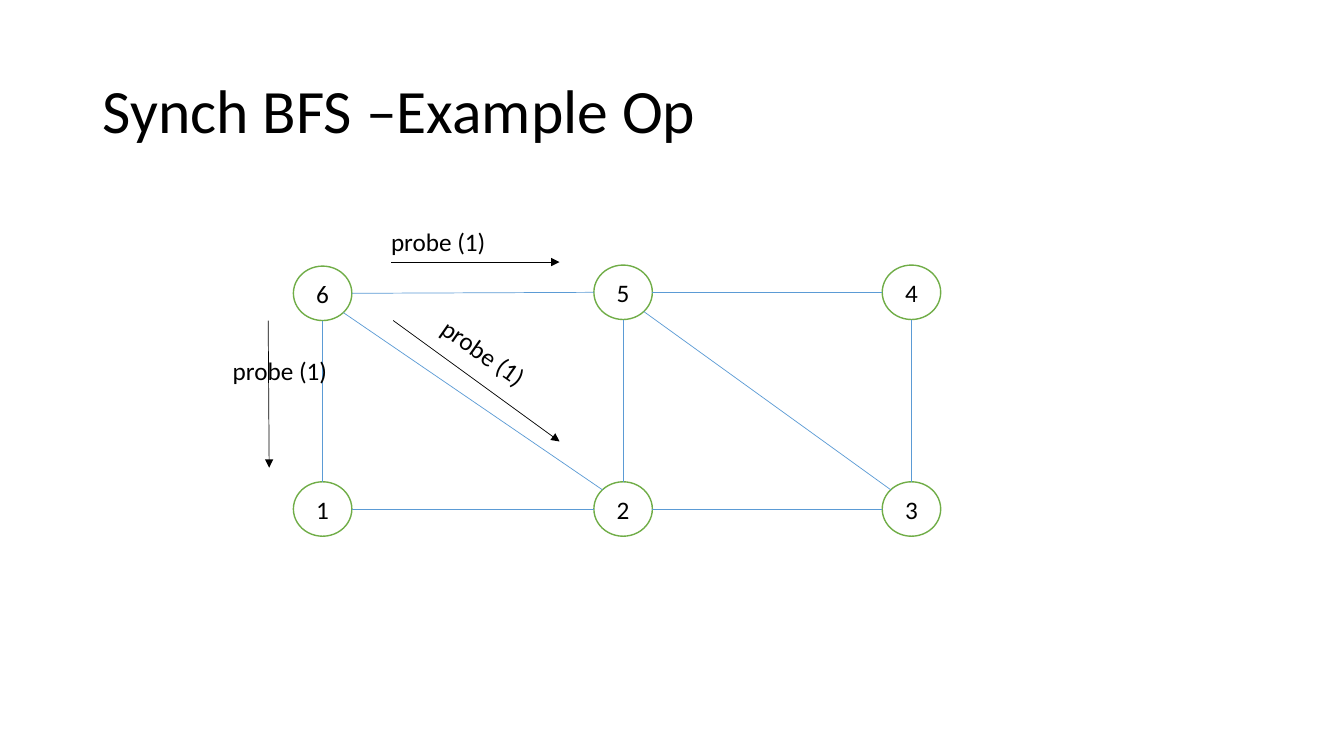
import math

import lxml.etree
import pptx
import pptx.dml.color
import pptx.enum.shapes
import pptx.enum.text
import pptx.oxml.ns
import pptx.util

PX = 9144
WIDE, HIGH = 58, 54
COLORS = {"text": "000000", "node": "FFFFFF", "ring": "70AD47", "edge": "5B9BD5"}
ALIGN = pptx.enum.text.PP_ALIGN
ANCHOR = pptx.enum.text.MSO_ANCHOR
SIZING = pptx.enum.text.MSO_AUTO_SIZE

NODES = {
    "1": (291, 478),
    "5": (589, 263),
    "2": (589, 478),
    "4": (875, 263),
    "3": (875, 478),
    "6": (291, 264),
}
EDGES = [
    ("6", "5", 1, 0),
    ("6", "1", 0, 1),
    ("1", "2", 1, 0),
    ("5", "2", 0, 1),
    ("5", "4", 1, 0),
    ("4", "3", 0, 1),
    ("2", "3", 1, 0),
    ("6", "2", 1, 1),
    ("5", "3", 1, 1),
]
PROBES = [
    ((388, 260), (555, 260), (378, 220), 0),
    ((266, 318), (267, 464), (221, 348), 0),
    ((390, 318), (555, 438), (423, 330), 35),
]


def scale(*vals):
    return [round(val * PX) for val in vals]


def color(name):
    return pptx.dml.color.RGBColor.from_string(COLORS[name])


def apply(item, vals):
    for name, val in vals.items():
        setattr(item, name, val)


def write(shape, text, size, frame, para):
    box = shape.text_frame
    box.text = text
    apply(box, frame)
    first = box.paragraphs[0]
    apply(first, para)
    font = first.runs[0].font
    apply(font, {"size": pptx.util.Pt(size), "name": "Calibri"})
    font.color.rgb = color("text")


def add_title(slide):
    title = slide.shapes.title
    left, top, width, height = scale(92, 40, 1150, 145)
    apply(title, {"left": left, "top": top, "width": width, "height": height})
    write(title, "Synch BFS –Example Op", 44,
          {"vertical_anchor": ANCHOR.MIDDLE, "auto_size": SIZING.NONE},
          {"alignment": ALIGN.LEFT, "line_spacing": 0.9})


def add_node(slide, name, place):
    kind = pptx.enum.shapes.MSO_SHAPE.OVAL
    node = slide.shapes.add_shape(kind, *scale(*place, WIDE, HIGH))
    node.shadow.inherit = False
    node.fill.solid()
    node.fill.fore_color.rgb = color("node")
    node.line.color.rgb = color("ring")
    node.line.width = pptx.util.Pt(1)
    write(node, name, 18, {"vertical_anchor": ANCHOR.MIDDLE},
          {"alignment": ALIGN.CENTER})


def add_line(slide, start, end, name):
    kind = pptx.enum.shapes.MSO_CONNECTOR.STRAIGHT
    line = slide.shapes.add_connector(kind, *scale(*start, *end))
    line.line.color.rgb = color(name)
    line.line.width = pptx.util.Pt(0.5)
    props = line._element.spPr
    lxml.etree.SubElement(props, pptx.oxml.ns.qn("a:effectLst"))
    return line


def add_arrow(slide, start, end):
    line = add_line(slide, start, end, "text")
    stroke = line.line._get_or_add_ln()
    tip = lxml.etree.SubElement(stroke, pptx.oxml.ns.qn("a:tailEnd"))
    tip.set("type", "triangle")


def add_label(slide, place, turn):
    label = slide.shapes.add_textbox(*scale(*place, 115, 40))
    label.rotation = turn
    write(label, "probe (1)", 18,
          {"word_wrap": False, "auto_size": SIZING.SHAPE_TO_FIT_TEXT},
          {"alignment": ALIGN.LEFT})


def rim(name, across, down):
    left, top = NODES[name]
    reach = math.hypot(across, down)
    return (left + WIDE / 2 * (1 + across / reach),
            top + HIGH / 2 * (1 + down / reach))


def main():
    deck = pptx.Presentation()
    deck.slide_width, deck.slide_height = scale(1333, 750)
    slide = deck.slides.add_slide(deck.slide_layouts[5])
    add_title(slide)
    for name, place in NODES.items():
        add_node(slide, name, place)
    for first, last, across, down in EDGES:
        add_line(slide, rim(first, across, down), rim(last, -across, -down), "edge")
    for start, end, place, turn in PROBES:
        add_arrow(slide, start, end)
        add_label(slide, place, turn)
    deck.save("out.pptx")


if __name__ == "__main__":
    main()
